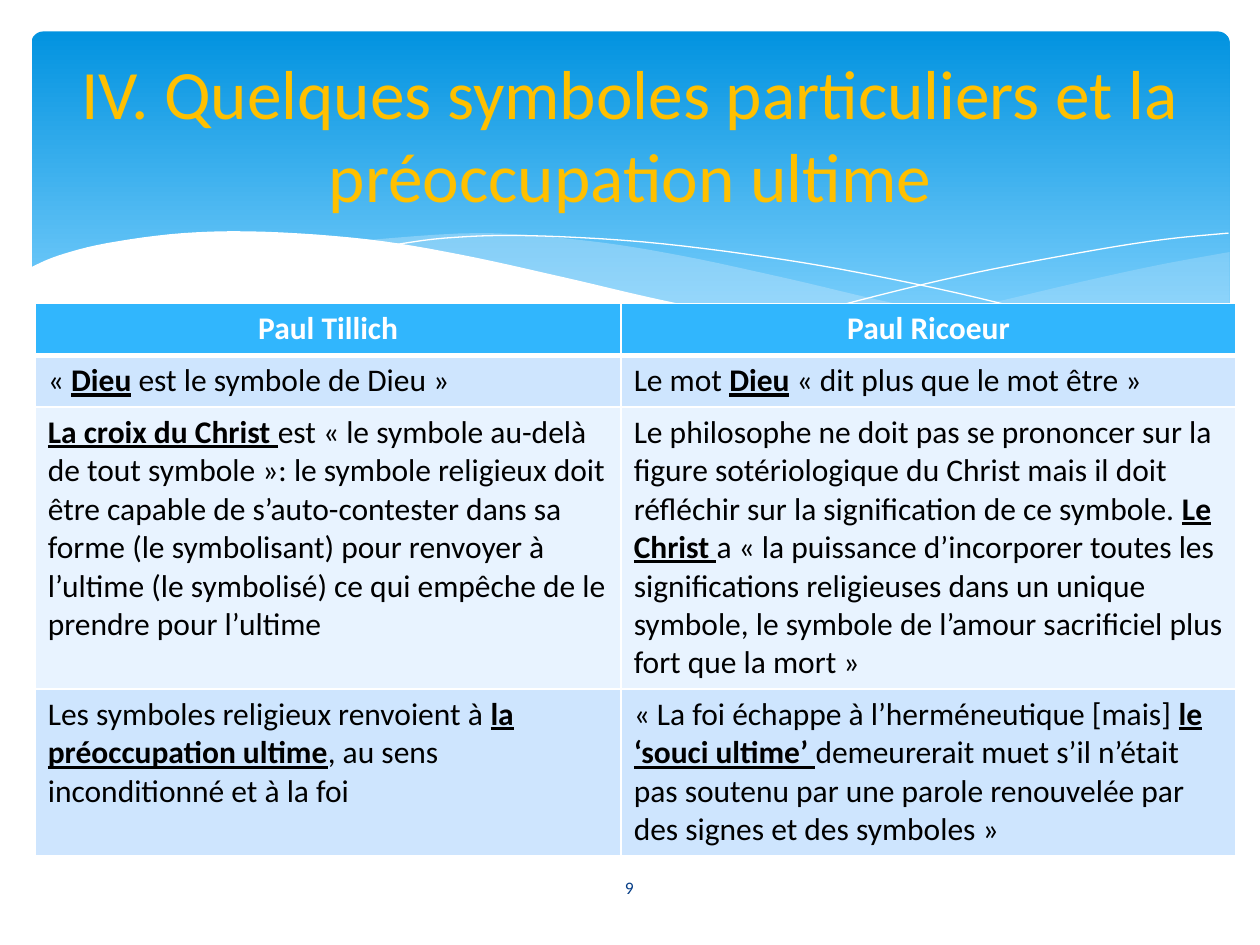
from lxml.etree import SubElement
from pptx import Presentation
from pptx.dml.color import RGBColor
from pptx.enum.shapes import MSO_SHAPE as Shape
from pptx.enum.text import MSO_ANCHOR as Anchor, PP_ALIGN as Align
from pptx.oxml import parse_xml
from pptx.oxml.ns import nsdecls, qn
from pptx.util import Inches, Pt

WIDTH, HEIGHT = 10, 7.5
FONT = "Calibri"
HEADERS = ["Paul Tillich", "Paul Ricoeur"]
ROWS = [
    [("« ", "Dieu", " est le symbole de Dieu »"),
     ("Le mot ", "Dieu", " « dit plus que le mot être »")],
    [("", "La croix du Christ ",
      "est « le symbole au-delà de tout symbole »: le symbole religieux doit être "
      "capable de s’auto-contester dans sa forme (le symbolisant) pour renvoyer à "
      "l’ultime (le symbolisé) ce qui empêche de le prendre pour l’ultime"),
     ("Le philosophe ne doit pas se prononcer sur la figure sotériologique du Christ "
      "mais il doit réfléchir sur la signification de ce symbole. ", "Le Christ ",
      "a « la puissance d’incorporer toutes les significations religieuses dans un "
      "unique symbole, le symbole de l’amour sacrificiel plus fort que la mort »")],
    [("Les symboles religieux renvoient à ", "la préoccupation ultime",
      ", au sens inconditionné et à la foi"),
     ("« La foi échappe à l’herméneutique [mais] ", "le ‘souci ultime’ ",
      "demeurerait muet s’il n’était pas soutenu par une parole renouvelée par des "
      "signes et des symboles »")],
]
RIGHT_WAVE = [(9.76, 2), (9.21, 2.1), (8.61, 2.23), (7.53, 2.48), (6.61, 2.65)]
RIGHT_WAVE_BASE = [(6.61, 2.65), (7.32, 2.74), (8.03, 2.78), (8.72, 2.74),
                   (9.28, 2.63), (9.76, 2.47)]
MIDDLE_WAVE = [(8.93, 2.73), (8.07, 2.6), (7.06, 2.4), (6.29, 2.22), (5.41, 2.03),
               (4.65, 1.91), (3.8, 1.85), (2.86, 1.91)]
MIDDLE_WAVE_BASE = [(2.86, 1.91), (3.62, 2.03), (4.49, 2.22), (5.66, 2.48), (6.5, 2.64),
                    (7.36, 2.75), (8.18, 2.78), (8.93, 2.73)]
FALLING_LINE = [(3.09, 1.95), (3.53, 1.89), (4.16, 1.87), (5.1, 1.92), (6.08, 2.04),
                (6.95, 2.19), (7.95, 2.41), (9.07, 2.72)]
RISING_LINE = [(6.13, 2.57), (6.95, 2.35), (7.76, 2.16), (8.66, 1.99), (9.24, 1.9),
               (9.75, 1.85)]
FRONT_WAVE = [(9.77, 2.46), (9.3, 2.62), (8.75, 2.73), (8.09, 2.77), (7.26, 2.72),
              (6.26, 2.58), (5.29, 2.39), (4.47, 2.2), (3.65, 2.02), (2.92, 1.9),
              (2.11, 1.84), (1.46, 1.85), (0.85, 1.93), (0.46, 2.03), (0.23, 2.13)]


def color(value):
    """Turn a hex string into a colour."""
    return RGBColor.from_string(value)


def style(span, size, tint, bold=False, underline=False):
    """Format one run of text."""
    span.font.name, span.font.size = FONT, Pt(size)
    span.font.bold, span.font.underline = bold, underline
    span.font.color.rgb = color(tint)


def smooth(knots, steps=6):
    """Return the points of a Catmull-Rom curve through the knots."""
    padded = [knots[0], *knots, knots[-1]]
    points = [knots[0]]
    for a, b, c, d in zip(padded, padded[1:], padded[2:], padded[3:]):
        for t in (step / steps for step in range(1, steps + 1)):
            points.append(tuple(
                (2 * q + (r - p) * t + (2 * p - 5 * q + 4 * r - s) * t ** 2
                 + (3 * q - p - 3 * r + s) * t ** 3) / 2
                for p, q, r, s in zip(a, b, c, d)))
    return points


def add_curve(page, points, fill=None, alpha=100):
    """Draw a filled wave, or a white hairline when there is no fill."""
    start, *rest = [(Inches(x), Inches(y)) for x, y in points]
    builder = page.shapes.build_freeform(*start)
    builder.add_line_segments(rest, close=fill is not None)
    curve = builder.convert_to_shape()
    curve.shadow.inherit = False
    if fill is None:
        curve.fill.background()
        curve.line.color.rgb = color("FFFFFF")
        curve.line.width = Pt(0)
        return
    curve.fill.solid()
    curve.fill.fore_color.rgb = color(fill)
    curve.line.fill.background()
    if alpha < 100:
        tint = curve.fill._xPr.find(".//" + qn("a:srgbClr"))
        SubElement(tint, qn("a:alpha")).set("val", str(alpha * 1000))


def add_banner(page, left, top, width, height):
    """Draw the gradient banner and the waves that close it."""
    banner = page.shapes.add_shape(Shape.ROUNDED_RECTANGLE, *map(Inches, (left, top, width, height)))
    banner.adjustments[0] = 0.034
    banner.shadow.inherit = False
    banner.line.fill.background()
    banner.fill.gradient()
    banner.fill.gradient_angle = 270
    for stop, (position, tint) in zip(banner.fill.gradient_stops, [(0, "0293E0"), (0.9, "83D3FE")]):
        stop.position, stop.color.rgb = position, color(tint)
    add_curve(page, smooth(RIGHT_WAVE) + smooth(RIGHT_WAVE_BASE), "C6E7FC", 29)
    add_curve(page, smooth(MIDDLE_WAVE) + smooth(MIDDLE_WAVE_BASE), "C6E7FC", 40)
    add_curve(page, smooth(FALLING_LINE))
    add_curve(page, smooth(RISING_LINE))
    add_curve(page, smooth(FRONT_WAVE) + [(0.23, 3.29), (9.77, 3.29)], "FFFFFF")


def format_cell(cell, fill, top=1, bottom=1):
    """Fill a cell and give it white borders."""
    cell.fill.solid()
    cell.fill.fore_color.rgb = color(fill)
    borders = {"lnL": 1, "lnR": 1, "lnT": top, "lnB": bottom}
    for index, (side, width) in enumerate(borders.items()):
        cell._tc.get_or_add_tcPr().insert(index, parse_xml(
            f'<a:{side} {nsdecls("a")} w="{Pt(width)}"><a:solidFill>'
            f'<a:srgbClr val="FFFFFF"/></a:solidFill></a:{side}>'))


def add_comparison(page, left, top, columns, heights):
    """Place the table that compares the two authors."""
    box = page.shapes.add_table(len(heights), len(columns), Inches(left), Inches(top),
                                Inches(sum(columns)), Inches(sum(heights)))
    table = box.table
    for column, width in zip(table.columns, columns):
        column.width = Inches(width)
    for row, height in zip(table.rows, heights):
        row.height = Inches(height)
    for cell, header in zip(table.rows[0].cells, HEADERS):
        format_cell(cell, "31B6FD", bottom=3)
        para = cell.text_frame.paragraphs[0]
        para.text, para.alignment = header, Align.CENTER
        style(para.runs[0], 18, "FFFFFF", bold=True)
    for number, texts in enumerate(ROWS, 1):
        for cell, parts in zip(table.rows[number].cells, texts):
            format_cell(cell, "CEE5FE" if number % 2 else "E8F3FF", top=3 if number == 1 else 1)
            para = cell.text_frame.paragraphs[0]
            for part, strong in zip(parts, (False, True, False)):
                if part:
                    span = para.add_run()
                    span.text = part
                    style(span, 18, "000000", strong, strong)


def fill_text(box, area, text, size, tint):
    """Place a box and set its centred text."""
    box.left, box.top, box.width, box.height = map(Inches, area)
    frame = box.text_frame
    frame.text, frame.word_wrap = text, True
    frame.vertical_anchor = Anchor.MIDDLE
    frame.paragraphs[0].alignment = Align.CENTER
    style(frame.paragraphs[0].runs[0], size, tint)


def main():
    """Build and save the deck."""
    deck = Presentation()
    deck.slide_width, deck.slide_height = Inches(WIDTH), Inches(HEIGHT)
    page = deck.slides.add_slide(deck.slide_layouts[5])
    title = page.shapes.title
    add_banner(page, 0.25, 0.25, 9.51, 2.7)
    add_comparison(page, 0.28, 2.41, [4.65, 4.88], [0.41, 0.41, 2.24, 1.31])
    number = page.shapes.add_textbox(0, 0, 0, 0)
    fill_text(number, (4.36, 6.84, 1.27, 0.4), "9", 10, "073E87")
    fill_text(title, (0.05 * WIDTH, 0.05 * HEIGHT, 0.9 * WIDTH, 1.37),
              "IV. Quelques symboles particuliers et la préoccupation ultime", 39.6, "FFC000")
    page.shapes._spTree.append(title._element)
    deck.save("out.pptx")


if __name__ == "__main__":
    main()
